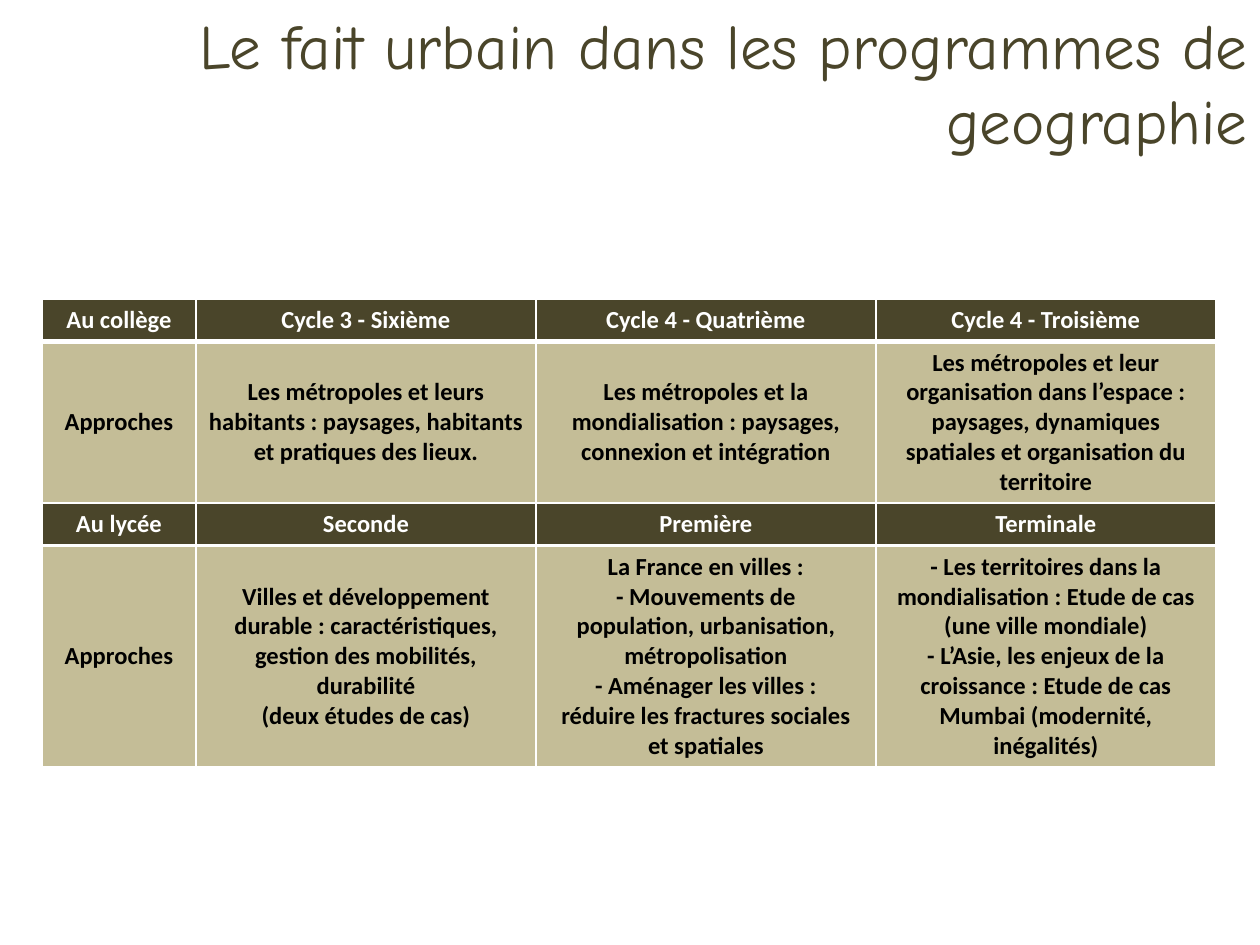
from dataclasses import dataclass

from lxml.etree import SubElement
from pptx import Presentation
from pptx.dml.color import RGBColor
from pptx.enum.text import MSO_ANCHOR, MSO_AUTO_SIZE, PP_ALIGN
from pptx.oxml.ns import qn
from pptx.util import Emu, Pt

PIXELS_PER_INCH = 126
DARK, SAND, WHITE, BLACK = "4A452A", "C4BD97", "FFFFFF", "000000"
COLUMN_WIDTHS = (154, 340, 340, 340)


@dataclass(frozen=True)
class TableRow:
    height: int
    fill: str
    color: str
    top_border: float
    bottom_border: float
    cells: tuple[str, ...]


ROWS = (
    TableRow(41, DARK, WHITE, 1, 3, (
        "Au collège", "Cycle 3 - Sixième", "Cycle 4 - Quatrième", "Cycle 4 - Troisième",
    )),
    TableRow(160, SAND, BLACK, 3, 1, (
        "Approches",
        "Les métropoles et leurs habitants : paysages, habitants et pratiques des lieux.",
        "Les métropoles et la mondialisation : paysages, connexion et intégration",
        "Les métropoles et leur organisation dans l’espace : paysages, dynamiques "
        "spatiales et organisation du territoire",
    )),
    TableRow(42, DARK, WHITE, 1, 2.25, (
        "Au lycée", "Seconde", "Première", "Terminale",
    )),
    TableRow(218, SAND, BLACK, 2.25, 1, (
        "Approches",
        "Villes et développement durable : caractéristiques, gestion des mobilités, durabilité\n"
        "(deux études de cas)",
        "La France en villes :\n"
        "- Mouvements de\vpopulation, urbanisation,\vmétropolisation\n"
        "- Aménager les villes :\vréduire les fractures sociales\vet spatiales",
        "- Les territoires dans la mondialisation : Etude de cas (une ville mondiale)\n"
        "- L’Asie, les enjeux de la croissance : Etude de cas Mumbai (modernité, inégalités)",
    )),
)


def px(length: int) -> Emu:
    return Emu(round(length * 914400 / PIXELS_PER_INCH))


def rgb(color: str) -> RGBColor:
    return RGBColor.from_string(color)


def write_text(text_frame, text: str, *, font: str, size: float, color: str,
               bold: bool = False, align=PP_ALIGN.CENTER) -> None:
    text_frame.text = text
    for paragraph in text_frame.paragraphs:
        paragraph.alignment = align
        for run in paragraph.runs:
            run.font.name = font
            run.font.size = Pt(size)
            run.font.bold = bold
            run.font.color.rgb = rgb(color)


def set_borders(cell, *, top: float, bottom: float, side: float = 1) -> None:
    """Draw white cell borders; the lines must precede the fill in the XML."""
    properties = cell._tc.get_or_add_tcPr()
    widths = {"a:lnL": side, "a:lnR": side, "a:lnT": top, "a:lnB": bottom}
    for index, (tag, width) in enumerate(widths.items()):
        line = SubElement(properties, qn(tag), w=str(Pt(width)))
        fill = SubElement(line, qn("a:solidFill"))
        SubElement(fill, qn("a:srgbClr"), val=WHITE)
        properties.insert(index, line)


def add_title(slide, text: str) -> None:
    title = slide.shapes.title
    title.left, title.top, title.width, title.height = px(0), px(0), px(1260), px(165)
    title.text_frame.word_wrap = True
    title.text_frame.auto_size = MSO_AUTO_SIZE.NONE
    title.text_frame.vertical_anchor = MSO_ANCHOR.TOP
    write_text(title.text_frame, text, font="Comic Neue", size=36, color=DARK,
               align=PP_ALIGN.RIGHT)


def add_programme_table(slide, rows: tuple[TableRow, ...]) -> None:
    table = slide.shapes.add_table(
        len(rows), len(COLUMN_WIDTHS), px(42), px(299),
        px(sum(COLUMN_WIDTHS)), px(sum(row.height for row in rows)),
    ).table
    for column, width in zip(table.columns, COLUMN_WIDTHS):
        column.width = px(width)
    for row_index, row in enumerate(rows):
        table.rows[row_index].height = px(row.height)
        for column_index, text in enumerate(row.cells):
            cell = table.cell(row_index, column_index)
            cell.vertical_anchor = MSO_ANCHOR.MIDDLE
            cell.fill.solid()
            cell.fill.fore_color.rgb = rgb(row.fill)
            set_borders(cell, top=row.top_border, bottom=row.bottom_border)
            write_text(cell.text_frame, text, font="Calibri", size=14,
                       color=row.color, bold=True)


def main() -> None:
    presentation = Presentation()
    presentation.slide_width, presentation.slide_height = px(1260), px(945)
    slide = presentation.slides.add_slide(presentation.slide_layouts[5])
    add_title(slide, "Le fait urbain dans les programmes de geographie")
    add_programme_table(slide, ROWS)
    presentation.save("out.pptx")


if __name__ == "__main__":
    main()
